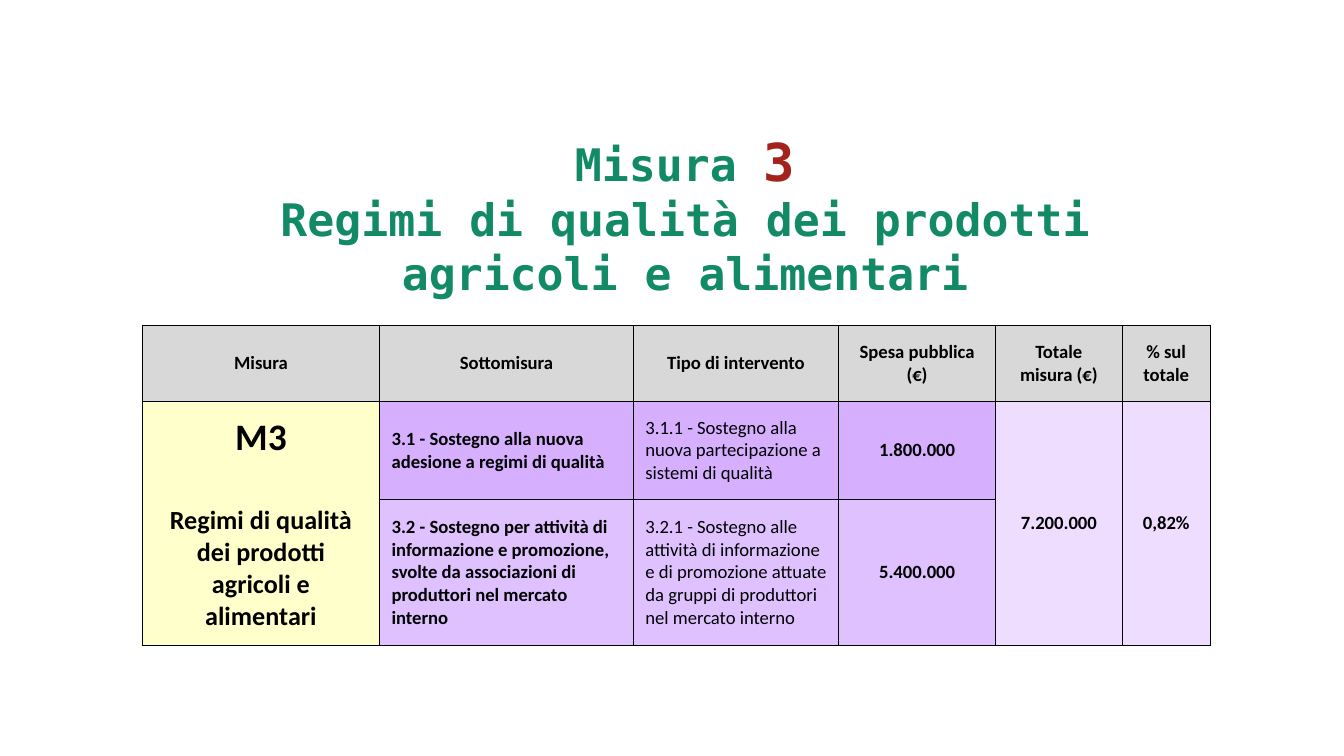
from lxml.etree import SubElement
from pptx import Presentation
from pptx.dml.color import RGBColor
from pptx.enum.text import MSO_ANCHOR, PP_ALIGN
from pptx.oxml.ns import qn
from pptx.util import Pt

TITLE_FONT, TABLE_FONT = "DejaVu Sans Mono", "Calibri"
GREEN, RED, BLACK = "128A66", "A3231C", "000000"
GREY, YELLOW = "D8D8D8", "FFFFCC"
PURPLE, LILAC, PALE = "D7AFFF", "E0C1FF", "EEDDFF"
COLUMNS = [127, 136, 110, 84, 68, 47]
ROWS = [41, 52.5, 78]
HEADERS = ["Misura", "Sottomisura", "Tipo di intervento", "Spesa pubblica\n(€)",
           "Totale misura (€)", "% sul totale"]
MEASURES = [
    (PURPLE, "3.1 - Sostegno alla nuova adesione a regimi di qualità",
     "3.1.1 - Sostegno alla nuova partecipazione a sistemi di qualità", "1.800.000"),
    (LILAC, "3.2 - Sostegno per attività di informazione e promozione, svolte da "
     "associazioni di produttori nel mercato interno",
     "3.2.1 - Sostegno alle attività di informazione e di promozione attuate da "
     "gruppi di produttori nel mercato interno", "5.400.000"),
]


def rgb(color):
    return RGBColor.from_string(color)


def set_attributes(obj, values):
    for name, value in values.items():
        setattr(obj, name, value)


def add_run(p, text, size, color=BLACK, font=TABLE_FONT, bold=True):
    r = p.add_run()
    r.text = text
    set_attributes(r.font, {"name": font, "size": Pt(size), "bold": bold})
    r.font.color.rgb = rgb(color)


def add_title(s):
    tf = s.shapes.add_textbox(Pt(98), Pt(66), Pt(538), Pt(69)).text_frame
    set_attributes(tf, {"word_wrap": True, "margin_left": Pt(6.5), "margin_right": Pt(6.5),
                        "margin_top": Pt(3), "margin_bottom": Pt(3)})
    lines = [[("Misura ", 24, GREEN), ("3", 28, RED)],
             [("Regimi di qualità dei prodotti agricoli e alimentari", 24, GREEN)]]
    for i, line in enumerate(lines):
        p = tf.add_paragraph() if i else tf.paragraphs[0]
        p.alignment = PP_ALIGN.CENTER
        for text, size, color in line:
            add_run(p, text, size, color, TITLE_FONT)


def add_borders(cell):
    tcPr = cell._tc.get_or_add_tcPr()
    for side in ("a:lnL", "a:lnR", "a:lnT", "a:lnB"):
        ln = SubElement(tcPr, qn(side), w=str(Pt(0.5)))
        SubElement(SubElement(ln, qn("a:solidFill")), qn("a:srgbClr"), val=BLACK)


def fill_cell(cell, text, color, sizes=(10,), bold=True, align=PP_ALIGN.CENTER,
              margin=(6.5, 3), gap=0):
    """Write one paragraph per line of text, with the last size repeating."""
    cell.fill.solid()
    cell.fill.fore_color.rgb = rgb(color)
    side, edge = map(Pt, margin)
    set_attributes(cell, {"vertical_anchor": MSO_ANCHOR.MIDDLE, "margin_left": side,
                          "margin_right": side, "margin_top": edge, "margin_bottom": edge})
    tf = cell.text_frame
    for i, line in enumerate(text.split("\n")):
        p = tf.add_paragraph() if i else tf.paragraphs[0]
        p.alignment = align
        if i and gap:
            p.space_before = Pt(gap)
        add_run(p, line, sizes[min(i, len(sizes) - 1)], bold=bold)


def add_measure_table(s):
    table = s.shapes.add_table(len(ROWS), len(COLUMNS), Pt(76.3), Pt(174.2),
                               Pt(sum(COLUMNS)), Pt(sum(ROWS))).table
    for column, width in zip(table.columns, COLUMNS):
        column.width = Pt(width)
    for row, height in zip(table.rows, ROWS):
        row.height = Pt(height)
    for cell in table.iter_cells():
        add_borders(cell)
    for col in (0, 4, 5):
        table.cell(1, col).merge(table.cell(2, col))

    for col, text in enumerate(HEADERS):
        fill_cell(table.cell(0, col), text, GREY)
    fill_cell(table.cell(1, 0), "M3\nRegimi di qualità dei prodotti agricoli e alimentari",
              YELLOW, sizes=(20, 14), gap=24)
    number = {"margin": (0.7, 0.5)}
    for row, (color, submeasure, kind, expense) in enumerate(MEASURES, 1):
        fill_cell(table.cell(row, 1), submeasure, color, align=PP_ALIGN.LEFT)
        fill_cell(table.cell(row, 2), kind, color, bold=False, align=PP_ALIGN.LEFT)
        fill_cell(table.cell(row, 3), expense, color, **number)
    for col, text in ((4, "7.200.000"), (5, "0,82%")):
        fill_cell(table.cell(1, col), text, PALE, **number)


def main():
    prs = Presentation()
    set_attributes(prs, {"slide_width": Pt(720), "slide_height": Pt(405)})
    s = prs.slides.add_slide(prs.slide_layouts[6])
    add_title(s)
    add_measure_table(s)
    prs.save("out.pptx")


if __name__ == "__main__":
    main()
